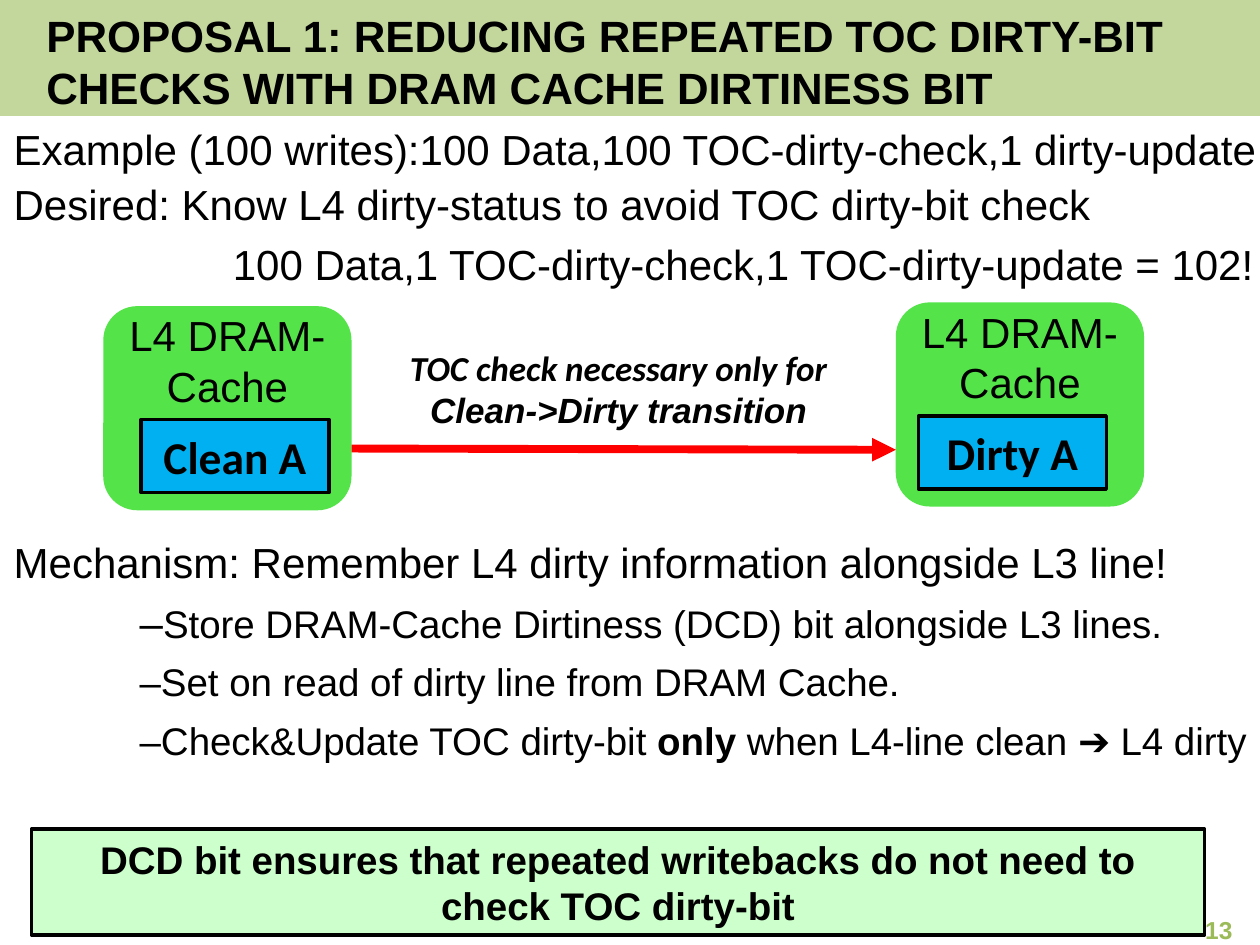
"""Builds the slide on reducing repeated TOC dirty-bit checks."""
import pptx
import pptx.util
import pptx.dml.color
import pptx.enum.shapes
import pptx.enum.text
import pptx.oxml

Inches, Pt = pptx.util.Inches, pptx.util.Pt
SHAPE = pptx.enum.shapes.MSO_SHAPE
ALIGN = pptx.enum.text.PP_ALIGN
ANCHOR = pptx.enum.text.MSO_ANCHOR

COLORS = {"band": "C3D69B", "cache": "54E44A", "line": "00B0F0", "arrow": "FF0000",
          "takeaway": "CCFFCC", "text": "000000", "number": "9BBB59"}
BOLD = {"bold": True}

TITLE = "PROPOSAL 1: REDUCING REPEATED TOC DIRTY-BIT CHECKS WITH DRAM CACHE DIRTINESS BIT"
TAKEAWAY = "DCD bit ensures that repeated writebacks do not need to check TOC dirty-bit"
BODY = [
    ((0.01, 0.93, 10.39, 0.42), [
        (0, 5.5, [("Example (100 writes):100 Data,100 TOC-dirty-check,1 dirty-update", {})])]),
    ((0.01, 1.37, 10.05, 0.74), [
        (0, 5.5, [("Desired: Know L4 dirty-status to avoid TOC dirty-bit check", {})]),
        (1.74, 5.5, [("100 Data,1 TOC-dirty-check,1 TOC-dirty-update = 102!", {})])]),
    ((0.01, 4.21, 10.32, 0.74), [
        (0, 5.5, [("Mechanism: Remember L4 dirty information alongside L3 line!", {})]),
        (1, 5.5, [("–", {}),
                  ("Store DRAM-Cache Dirtiness (DCD) bit alongside L3 lines.", {"size": 22})]),
        (1, 6, [("–Set on read of dirty line from DRAM Cache.", {"size": 22})]),
        (1, 7.5, [("–Check&Update TOC dirty-bit ", {"size": 22}),
                  ("only ", {"size": 22, "bold": True}),
                  ("when L4-line clean ➔ L4 dirty", {"size": 22})])]),
]
CACHES = [("Clean A", (0.82, 2.43), 0.3), ("Dirty A", (7.11, 2.4), 0.18)]
TRANSITION = [("TOC check necessary only for", "Calibri"), ("Clean->Dirty transition", "Arial")]


def rgb(name):
    return pptx.dml.color.RGBColor.from_string(COLORS[name])


def add_run(paragraph, words, size=24, font="Arial", color="text", bold=False, italic=False):
    run = paragraph.add_run()
    run.text = words
    run.font.size, run.font.name = Pt(size), font
    run.font.bold, run.font.italic = bold, italic
    run.font.color.rgb = rgb(color)


def write(frame, paragraphs, align=ALIGN.LEFT, anchor=ANCHOR.TOP, wrap=True):
    frame.word_wrap, frame.vertical_anchor = wrap, anchor
    for index, (indent, before, runs) in enumerate(paragraphs):
        paragraph = frame.add_paragraph() if index else frame.paragraphs[0]
        paragraph.alignment, paragraph.space_before = align, Pt(before)
        if indent:
            properties = paragraph._p.get_or_add_pPr()
            properties.set("marL", str(Inches(indent)))
            properties.set("indent", "0")
        for words, style in runs:
            add_run(paragraph, words, **style)


def add_text(slide, place, paragraphs, **layout):
    box = slide.shapes.add_textbox(*map(Inches, place))
    write(box.text_frame, paragraphs, **layout)


def add_block(slide, kind, place, fill, words="", outlined=False, bottom=0.05, **style):
    block = slide.shapes.add_shape(kind, *map(Inches, place))
    block.shadow.inherit = False
    block.fill.solid()
    block.fill.fore_color.rgb = rgb(fill)
    if outlined:
        block.line.color.rgb, block.line.width = rgb("text"), Pt(2)
    else:
        block.line.fill.background()
    if words:
        block.text_frame.margin_top = Inches(min(0.05, 0.8 - bottom) if bottom <= 0.05 else 0)
        block.text_frame.margin_bottom = Inches(bottom)
        write(block.text_frame, [(0, 0, [(words, style)])], ALIGN.CENTER, ANCHOR.MIDDLE)


def add_arrow(slide, start, end):
    arrow = slide.shapes.add_connector(pptx.enum.shapes.MSO_CONNECTOR.STRAIGHT,
                                       *map(Inches, start + end))
    arrow.line.color.rgb, arrow.line.width = rgb("arrow"), Pt(4.5)
    namespace = pptx.oxml.ns.nsdecls("a")
    arrow.line._get_or_add_ln().append(
        pptx.oxml.parse_xml(f'<a:tailEnd {namespace} type="triangle"/>'))
    arrow._element.spPr.append(pptx.oxml.parse_xml(f"<a:effectLst {namespace}/>"))


def main():
    deck = pptx.Presentation()
    deck.slide_width, deck.slide_height = Inches(10), Inches(7.5)
    slide = deck.slides.add_slide(deck.slide_layouts[6])

    add_block(slide, SHAPE.RECTANGLE, (0, 0, 10, 0.92), "band")
    add_text(slide, (0.27, 0.22, 10.13, 0.53), [(0, 0, [(TITLE, {"size": 25, **BOLD})])],
             anchor=ANCHOR.MIDDLE)
    add_text(slide, (7.55, 7.25, 2.33, 0.26),
             [(0, 0, [("13", {"size": 14, "color": "number", **BOLD})])],
             align=ALIGN.RIGHT, anchor=ANCHOR.MIDDLE)
    for place, paragraphs in BODY:
        add_text(slide, place, paragraphs)

    for state, (left, top), inset in CACHES:
        add_block(slide, SHAPE.ROUNDED_RECTANGLE, (left, top, 1.97, 1.62), "cache",
                  "L4 DRAM-Cache", bottom=0.76)
        add_block(slide, SHAPE.RECTANGLE, (left + inset, top + 0.9, 1.49, 0.58), "line",
                  state, outlined=True, size=26, font="Calibri", bold=True)
    add_text(slide, (3.15, 2.7, 3.52, 0.76),
             [(0, 0, [(words, {"size": 20, "font": font, "italic": True, **BOLD})])
              for words, font in TRANSITION], align=ALIGN.CENTER, wrap=False)
    add_arrow(slide, (2.79, 3.56), (7.11, 3.57))

    add_block(slide, SHAPE.RECTANGLE, (0.25, 6.58, 9.31, 0.84), "takeaway", TAKEAWAY,
              outlined=True, size=22, bold=True)
    deck.save("out.pptx")


if __name__ == "__main__":
    main()
